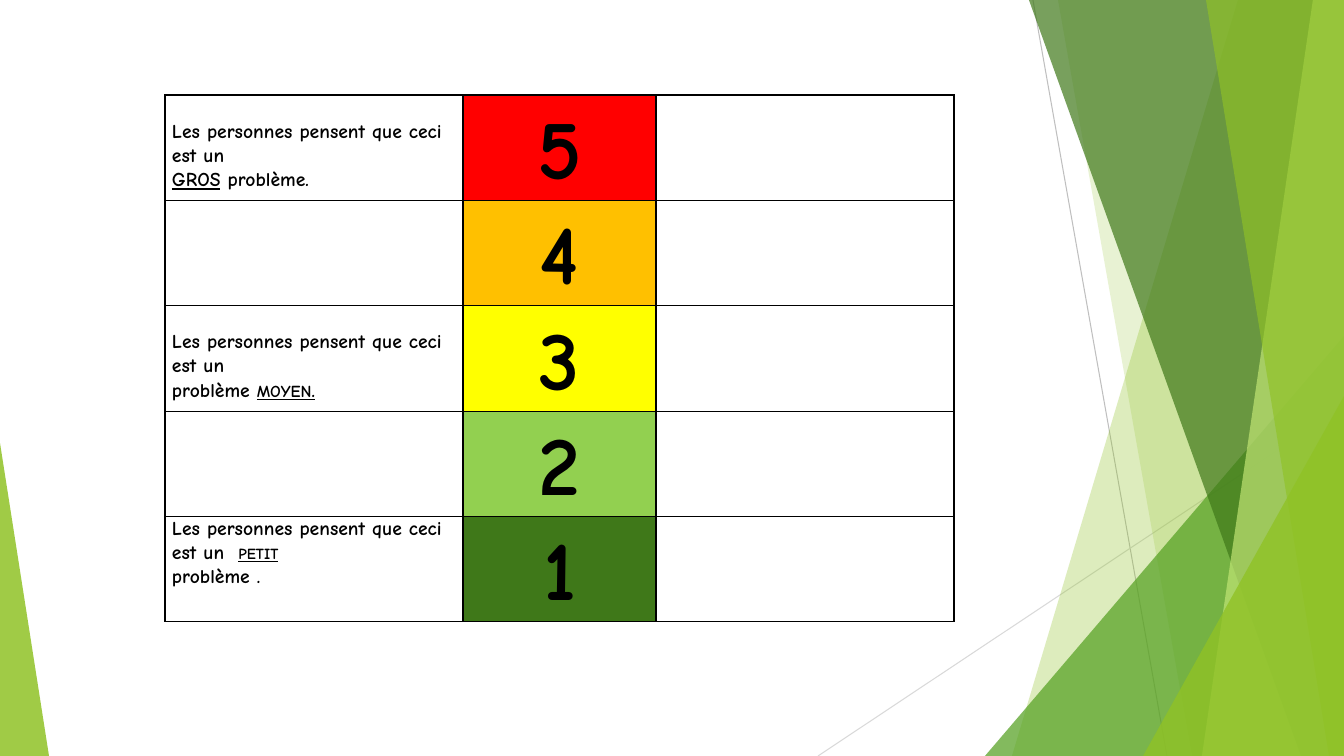
from lxml import etree
from pptx import Presentation
from pptx.dml.color import RGBColor
from pptx.enum.shapes import MSO_CONNECTOR, MSO_SHAPE
from pptx.enum.text import PP_ALIGN
from pptx.oxml.ns import qn
from pptx.util import Pt

STRAIGHT = MSO_CONNECTOR.STRAIGHT
TRIANGLE = MSO_SHAPE.ISOSCELES_TRIANGLE
CENTER = PP_ALIGN.CENTER

BLACK = RGBColor(0x00, 0x00, 0x00)
RED = RGBColor(0xFF, 0x00, 0x00)
ORANGE = RGBColor(0xFF, 0xC0, 0x00)
YELLOW = RGBColor(0xFF, 0xFF, 0x00)
LIGHT_GREEN = RGBColor(0x92, 0xD0, 0x50)
DARK_GREEN = RGBColor(0x3F, 0x78, 0x19)
LIME = RGBColor(0x90, 0xC2, 0x26)
LEAF = RGBColor(0x54, 0xA0, 0x21)
PALE_LIME = RGBColor(0xC0, 0xE4, 0x74)
GREY = RGBColor(0xBF, 0xBF, 0xBF)
PALE_GREY = RGBColor(0xD9, 0xD9, 0xD9)

FONT = "Comic Neue"
WIDTH, HEIGHT = 1344, 756

# Each run: text, size, underlined, letter spacing in points
OPENING = [("Les personnes pensent que ceci est un", 14, False, 0)]
BIG = [OPENING, [("GROS", 14, True, 0), (" problème.", 14, False, 0)]]
MEDIUM = [OPENING, [("problème ", 14, False, 0), ("MOYEN", 12, True, 0), (".", 14, True, 0)]]
SMALL = [OPENING + [(" ", 14, False, 5), ("PETIT", 11, True, 0)],
         [("problème .", 14, False, 0)]]

# Level, colour, paragraphs, space above the paragraphs
LEVELS = [
    ("5", RED, BIG, 24),
    ("4", ORANGE, [], 0),
    ("3", YELLOW, MEDIUM, 24),
    ("2", LIGHT_GREEN, [], 0),
    ("1", DARK_GREEN, SMALL, 0),
]
TABLE_LEFT, TABLE_TOP, ROW_HEIGHT = 165, 95, 105
COLUMNS = [298, 193, 298]
SIDE_MARGIN, NUMBER_TOP = 7, 2

# Start, end, colour
RAYS = [((1033, 0), (1167, 756), GREY), ((1344, 406), (818, 756), PALE_GREY)]

# Panels run to the right edge: (x at top, x at bottom).
# Triangles: (left, top, width, height, apex).
FACETS = [
    ("panel", (1238, 1012), LIME, 30),
    ("panel", (1058, 1192), LIME, 20),
    ("triangle", (985, 336, 359, 420, 1), LEAF, 72),
    ("panel", (1029, 1301), DARK_GREEN, 70),
    ("panel", (1313, 1202), PALE_LIME, 70),
    ("panel", (1206, 1329), LIME, 65),
    ("triangle", (1143, 396, 201, 360, 1), LIME, 80),
    ("triangle", (0, 443, 49, 313, 0), LIME, 85),
]


def px(n):
    return round(n * 914400 / 100.8)


def add_ray(shapes, start, end, color):
    line = shapes.add_connector(STRAIGHT, *map(px, start + end))
    line.line.color.rgb = color
    line.line.width = Pt(0.75)
    etree.SubElement(line._element.spPr, qn("a:effectLst"))


def add_facet(shapes, kind, geometry, color, opacity):
    if kind == "panel":
        top_x, bottom_x = geometry
        builder = shapes.build_freeform(px(top_x), 0)
        corners = [(WIDTH, 0), (WIDTH, HEIGHT), (bottom_x, HEIGHT)]
        builder.add_line_segments([(px(x), px(y)) for x, y in corners], close=True)
        sp = builder.convert_to_shape()
    else:
        *box, apex = geometry
        sp = shapes.add_shape(TRIANGLE, *map(px, box))
        sp.adjustments[0] = apex
    sp.shadow.inherit = False
    sp.line.fill.background()
    sp.fill.solid()
    sp.fill.fore_color.rgb = color
    clr = sp._element.spPr.find(qn("a:solidFill"))[0]
    etree.SubElement(clr, qn("a:alpha"), val=str(opacity * 1000))


def add_run(p, text, size, underlined=False, spacing=0):
    r = p.add_run()
    r.text = text
    r.font.name = FONT
    r.font.size = Pt(size)
    r.font.bold = True
    r.font.underline = underlined
    r.font.color.rgb = BLACK
    if spacing:
        r.font._element.set("spc", str(spacing * 100))


def set_borders(cell):
    tc_pr = cell._tc.get_or_add_tcPr()
    for i, side in enumerate(("lnL", "lnR", "lnT", "lnB")):
        ln = etree.Element(qn("a:" + side), w=str(Pt(1)))
        fill = etree.SubElement(ln, qn("a:solidFill"))
        etree.SubElement(fill, qn("a:srgbClr"), val=str(BLACK))
        tc_pr.insert(i, ln)


def fill_cell(cell, paragraphs, top, color=None, align=None):
    cell.margin_left = cell.margin_right = px(SIDE_MARGIN)
    cell.margin_top, cell.margin_bottom = px(top), 0
    if color is None:
        cell.fill.background()
    else:
        cell.fill.solid()
        cell.fill.fore_color.rgb = color
    set_borders(cell)
    tf = cell.text_frame
    for i, runs in enumerate(paragraphs):
        p = tf.add_paragraph() if i else tf.paragraphs[0]
        p.line_spacing = 1.07
        p.alignment = align
        for run in runs:
            add_run(p, *run)


def add_scale_table(shapes):
    frame = shapes.add_table(len(LEVELS), len(COLUMNS), px(TABLE_LEFT), px(TABLE_TOP),
                             px(sum(COLUMNS)), px(ROW_HEIGHT * len(LEVELS)))
    table = frame.table
    table.first_row = table.horz_banding = False
    for column, width in zip(table.columns, COLUMNS):
        column.width = px(width)
    for row, (level, color, paragraphs, top) in zip(table.rows, LEVELS):
        row.height = px(ROW_HEIGHT)
        meaning, number, notes = row.cells
        fill_cell(meaning, paragraphs, top)
        fill_cell(number, [[(level, 60)]], NUMBER_TOP, color, CENTER)
        fill_cell(notes, [], 0)


def main():
    prs = Presentation()
    prs.slide_width, prs.slide_height = px(WIDTH), px(HEIGHT)
    s = prs.slides.add_slide(prs.slide_layouts[6])
    for ray in RAYS:
        add_ray(s.shapes, *ray)
    for facet in FACETS:
        add_facet(s.shapes, *facet)
    add_scale_table(s.shapes)
    prs.save("out.pptx")


if __name__ == "__main__":
    main()
